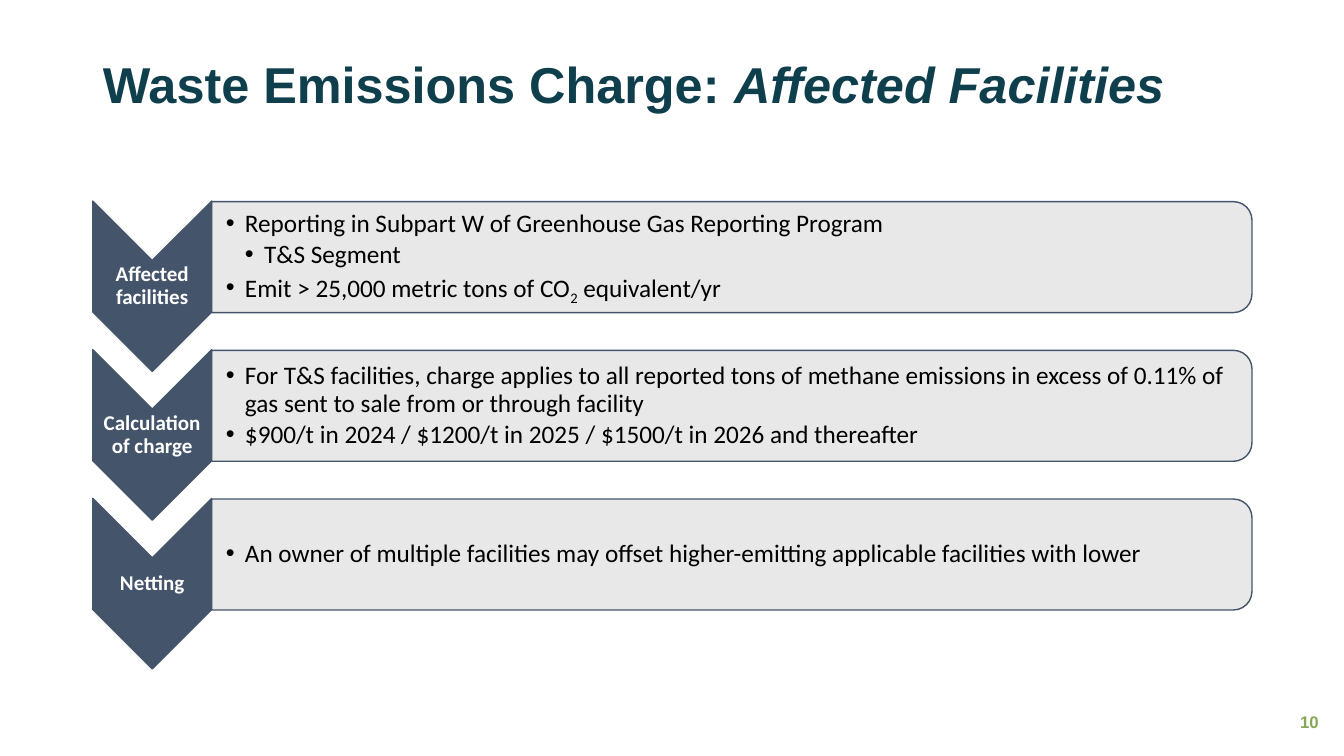
"""Build the slide on affected facilities under the Waste Emissions Charge."""
from dataclasses import dataclass

from lxml import etree
from pptx import Presentation
from pptx import util as u
from pptx.dml.color import RGBColor
from pptx.enum import shapes, text
from pptx.oxml import ns
from pptx.shapes.autoshape import Shape
from pptx.slide import Slide
from pptx.text.text import TextFrame, _Paragraph


@dataclass(frozen=True)
class Theme:
    """Colours, fonts and type sizes of the slide."""
    teal: str = "0F3E4D"
    slate: str = "44546A"
    panel: str = "E7E6E6"
    green: str = "84A856"
    white: str = "FFFFFF"
    black: str = "000000"
    heading_font: str = "Arial"
    body_font: str = "Calibri"
    title_size: int = 36
    body_size: int = 18
    label_size: int = 15
    number_size: int = 12


@dataclass(frozen=True)
class Box:
    """Area in percent of the slide's width and height."""
    left: float
    top: float
    width: float
    height: float

    def lowered(self, distance: float) -> "Box":
        """Return the box moved down by a distance."""
        return Box(self.left, self.top + distance, self.width, self.height)

    def emu(self) -> tuple[int, int, int, int]:
        """Return left, top, width and height in slide units."""
        return (int(self.left * WIDTH / 100), int(self.top * HEIGHT / 100),
                int(self.width * WIDTH / 100), int(self.height * HEIGHT / 100))


@dataclass(frozen=True)
class Bullet:
    """List entry with an optional subscript and the words after it."""
    words: str
    level: int = 0
    subscript: str = ""
    ending: str = ""


@dataclass(frozen=True)
class Step:
    """Chevron label and the list beside it."""
    label: str
    bullets: tuple[Bullet, ...]


THEME = Theme()
WIDTH, HEIGHT = u.Inches(13.33), u.Inches(7.5)
ROW_PITCH = 19.67
TITLE = Box(6.9, 1.87, 86.27, 19.33)
NUMBER = Box(93.17, 92.8, 5.33, 5.33)
CHEVRON = Box(6.9, 26.6, 8.85, 22.53)
LABEL = Box(6.9, 34.5, 8.85, 6.8)
PANEL = Box(15.75, 26.67, 77.4, 14.67)
LIST = Box(15.75, 27.4, 76.95, 13.2)
INDENT = u.Inches(0.19)
STEPS = (
    Step("Affected facilities", (
        Bullet("Reporting in Subpart W of Greenhouse Gas Reporting Program"),
        Bullet("T&S Segment", level=1),
        Bullet("Emit > 25,000 metric tons of CO", subscript="2", ending=" equivalent/yr"))),
    Step("Calculation of charge", (
        Bullet("For T&S facilities, charge applies to all reported tons of methane emissions "
               "in excess of 0.11% of gas sent to sale from or through facility"),
        Bullet("$900/t in 2024 / $1200/t in 2025 / $1500/t in 2026 and thereafter"))),
    Step("Netting", (
        Bullet("An owner of multiple facilities may offset higher-emitting applicable "
               "facilities with lower"),)),
)


def place(shape: Shape, box: Box) -> None:
    """Move and size a shape to a box."""
    shape.left, shape.top, shape.width, shape.height = box.emu()


def style(paragraph: _Paragraph, font: str, size: int, color: str, bold: bool,
          align: text.PP_ALIGN) -> None:
    """Set the font and alignment of a paragraph."""
    paragraph.alignment = align
    paragraph.font.name, paragraph.font.size = font, u.Pt(size)
    paragraph.font.bold = bold
    paragraph.font.color.rgb = RGBColor.from_string(color)


def prepare(frame: TextFrame, left: float = 0.1, other: float = 0.05) -> None:
    """Wrap and centre a text frame vertically with the given insets."""
    frame.word_wrap = True
    frame.auto_size = text.MSO_AUTO_SIZE.NONE
    frame.vertical_anchor = text.MSO_ANCHOR.MIDDLE
    frame.margin_left = u.Inches(left)
    frame.margin_top = frame.margin_right = frame.margin_bottom = u.Inches(other)


def add_turned(slide: Slide, kind: shapes.MSO_SHAPE, box: Box, fill: str) -> Shape:
    """Add a preset turned by a quarter so that it covers the box."""
    left, top, width, height = box.emu()
    shape = slide.shapes.add_shape(kind, left + (width - height) // 2,
                                   top + (height - width) // 2, height, width)
    shape.rotation = 90
    shape.shadow.inherit = False
    shape.fill.solid()
    shape.fill.fore_color.rgb = RGBColor.from_string(fill)
    shape.line.color.rgb = RGBColor.from_string(THEME.slate)
    shape.line.width = u.Pt(1)
    return shape


def write_bullet(paragraph: _Paragraph, bullet: Bullet) -> None:
    """Write one list entry with its bullet sign."""
    paragraph.level = bullet.level
    paragraph.line_spacing = 0.9
    paragraph.space_before, paragraph.space_after = u.Pt(0), u.Pt(2.7)
    properties = paragraph._p.get_or_add_pPr()
    properties.set("marL", str(INDENT * (bullet.level + 1)))
    properties.set("indent", str(-INDENT))
    etree.SubElement(properties, ns.qn("a:buFont"), typeface="Arial")
    etree.SubElement(properties, ns.qn("a:buChar"), char="•")
    style(paragraph, THEME.body_font, THEME.body_size, THEME.black, False, text.PP_ALIGN.LEFT)
    paragraph.add_run().text = bullet.words
    if bullet.subscript:
        run = paragraph.add_run()
        run.text = bullet.subscript
        run._r.get_or_add_rPr().set("baseline", "-25000")
        paragraph.add_run().text = bullet.ending


def add_label(slide: Slide, box: Box, words: str) -> None:
    """Add the white label of a chevron."""
    frame = slide.shapes.add_textbox(*box.emu()).text_frame
    prepare(frame, 0.01, 0.01)
    paragraph = frame.paragraphs[0]
    paragraph.text, paragraph.line_spacing = words, 0.9
    style(paragraph, THEME.body_font, THEME.label_size, THEME.white, True, text.PP_ALIGN.CENTER)


def add_step(slide: Slide, step: Step, body: Shape, drop: float) -> None:
    """Add a chevron with its label, panel and list."""
    add_turned(slide, shapes.MSO_SHAPE.CHEVRON, CHEVRON.lowered(drop), THEME.slate)
    add_label(slide, LABEL.lowered(drop), step.label)
    panel = add_turned(slide, shapes.MSO_SHAPE.ROUND_2_SAME_RECTANGLE,
                       PANEL.lowered(drop), THEME.panel)
    color = panel.element.spPr.find(ns.qn("a:solidFill"))[0]
    etree.SubElement(color, ns.qn("a:alpha"), val="90000")
    panel.element.addnext(body.element)
    place(body, LIST.lowered(drop))
    frame = body.text_frame
    prepare(frame, 0.14, 0.01)
    for index, bullet in enumerate(step.bullets):
        write_bullet(frame.add_paragraph() if index else frame.paragraphs[0], bullet)


def add_title(slide: Slide) -> None:
    """Fill the title placeholder."""
    title = slide.shapes.title
    place(title, TITLE)
    prepare(title.text_frame)
    paragraph = title.text_frame.paragraphs[0]
    paragraph.line_spacing = 0.9
    style(paragraph, THEME.heading_font, THEME.title_size, THEME.teal, True, text.PP_ALIGN.LEFT)
    paragraph.add_run().text = "Waste Emissions Charge: "
    topic = paragraph.add_run()
    topic.text, topic.font.italic = "Affected Facilities", True


def add_number(slide: Slide) -> None:
    """Add the slide number."""
    frame = slide.shapes.add_textbox(*NUMBER.emu()).text_frame
    prepare(frame)
    paragraph = frame.paragraphs[0]
    paragraph.text = "10"
    style(paragraph, THEME.heading_font, THEME.number_size, THEME.green, True, text.PP_ALIGN.RIGHT)


def main() -> None:
    """Build and save the presentation."""
    presentation = Presentation()
    presentation.slide_width, presentation.slide_height = WIDTH, HEIGHT
    slide = presentation.slides.add_slide(
        presentation.slide_layouts.get_by_name("Comparison"))
    add_title(slide)
    *bodies, spare = list(slide.placeholders)[1:]
    spare.element.getparent().remove(spare.element)
    for row, (step, body) in enumerate(zip(STEPS, bodies)):
        add_step(slide, step, body, row * ROW_PITCH)
    add_number(slide)
    presentation.save("out.pptx")


if __name__ == "__main__":
    main()
